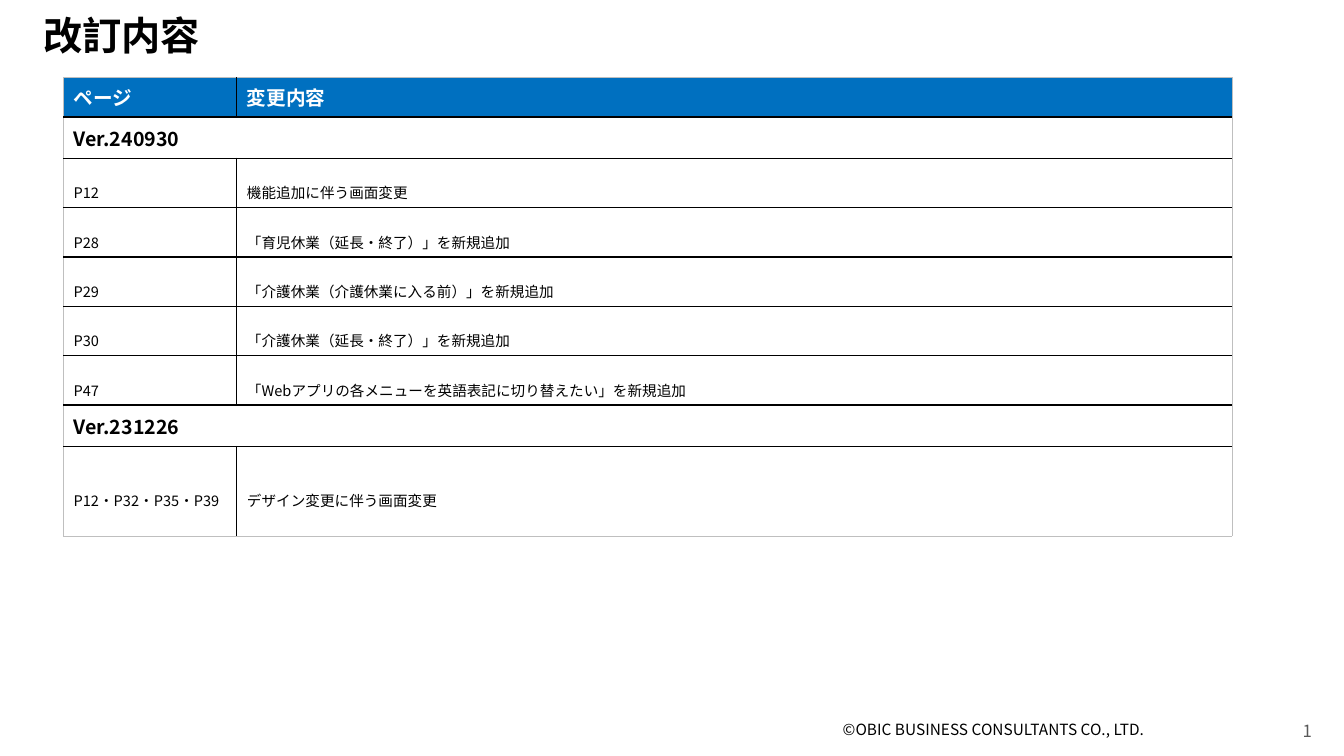
from lxml.etree import SubElement
from pptx import Presentation
from pptx.dml.color import RGBColor
from pptx.enum.text import MSO_ANCHOR, PP_ALIGN
from pptx.oxml.ns import qn
from pptx.util import Inches, Pt

FONT = "Noto Sans CJK JP"
BLACK, WHITE, BLUE, GREY, EDGE = "000000", "FFFFFF", "0070C0", "595959", "BFBFBF"
HEADER, VERSION, CHANGE, LONG_CHANGE = 0.39, 0.41, 0.49, 0.89
REVISIONS = [
    (HEADER, "ページ", "変更内容"),
    (VERSION, "Ver.240930", None),
    (CHANGE, "P12", "機能追加に伴う画面変更"),
    (CHANGE, "P28", "「育児休業（延長・終了）」を新規追加"),
    (CHANGE, "P29", "「介護休業（介護休業に入る前）」を新規追加"),
    (CHANGE, "P30", "「介護休業（延長・終了）」を新規追加"),
    (CHANGE, "P47", "「Webアプリの各メニューを英語表記に切り替えたい」を新規追加"),
    (VERSION, "Ver.231226", None),
    (LONG_CHANGE, "P12・P32・P35・P39", "デザイン変更に伴う画面変更"),
]


def rgb(value):
    return RGBColor.from_string(value)


def add_run(paragraph, text, size, color, bold=False, lowered=False):
    run = paragraph.add_run()
    run.text = text
    font = run.font
    font.name, font.size, font.bold = FONT, Pt(size), bold
    font.color.rgb = rgb(color)
    properties = font._element
    SubElement(properties, qn("a:ea"), typeface=FONT)
    if lowered:
        properties.set("baseline", "-25000")


def add_title(slide, text):
    title = slide.shapes.title
    title.left, title.top = Inches(0.33), Inches(0.11)
    title.width, title.height = Inches(12.55), Inches(0.65)
    title.text_frame.vertical_anchor = MSO_ANCHOR.TOP
    title.text_frame.word_wrap = True
    paragraph = title.text_frame.paragraphs[0]
    paragraph.alignment = PP_ALIGN.LEFT
    paragraph.line_spacing = 0.9
    add_run(paragraph, text, 28, BLACK, bold=True)


def add_footer(slide, left, width, text, size, color, align):
    footer = slide.shapes.add_textbox(Inches(left), Inches(7.1), Inches(width), Inches(0.4))
    footer.text_frame.word_wrap = True
    paragraph = footer.text_frame.paragraphs[0]
    paragraph.alignment = align
    add_run(paragraph, text, size, color)


def set_border(cell, side, color):
    outer = color == EDGE
    line = SubElement(cell._tc.get_or_add_tcPr(), qn(f"a:ln{side}"),
                      w=str(Pt(0.5 if outer else 1)))
    fill = SubElement(line, qn("a:solidFill"))
    SubElement(fill, qn("a:srgbClr"), val=color)


def format_cell(cell, row, column, merged):
    last = len(REVISIONS) - 1
    set_border(cell, "L", EDGE if column == 0 else BLACK)
    set_border(cell, "R", EDGE if column == 1 or merged else BLACK)
    set_border(cell, "T", EDGE if row == 0 else BLACK)
    set_border(cell, "B", EDGE if row == last else BLACK)
    cell.vertical_anchor = MSO_ANCHOR.MIDDLE
    if row == 0:
        cell.fill.solid()
        cell.fill.fore_color.rgb = rgb(BLUE)
    else:
        cell.fill.background()


def add_revision_table(slide):
    total = sum(height for height, *_ in REVISIONS)
    table = slide.shapes.add_table(len(REVISIONS), 2, Inches(0.63), Inches(0.77),
                                   Inches(11.59), Inches(total)).table
    table.first_row = table.horz_banding = False
    for column, width in zip(table.columns, (1.72, 9.87)):
        column.width = Inches(width)
    for row, (height, *entries) in enumerate(REVISIONS):
        table.rows[row].height = Inches(height)
        merged = entries[1] is None
        if merged:
            table.cell(row, 0).merge(table.cell(row, 1))
        heading = row == 0 or merged
        for column, text in enumerate(entries):
            if text is None:
                continue
            cell = table.cell(row, column)
            format_cell(cell, row, column, merged)
            add_run(cell.text_frame.paragraphs[0], text, 14 if heading else 18,
                    WHITE if row == 0 else BLACK, bold=heading, lowered=not heading)


def main():
    presentation = Presentation()
    presentation.slide_width, presentation.slide_height = Inches(13.33), Inches(7.5)
    slide = presentation.slides.add_slide(presentation.slide_layouts[5])
    add_footer(slide, 8.26, 4.5, "©OBIC BUSINESS CONSULTANTS CO., LTD.", 11, BLACK, PP_ALIGN.LEFT)
    add_footer(slide, 10.11, 3, "1", 12, GREY, PP_ALIGN.RIGHT)
    add_title(slide, "改訂内容")
    add_revision_table(slide)
    presentation.save("out.pptx")


if __name__ == "__main__":
    main()
